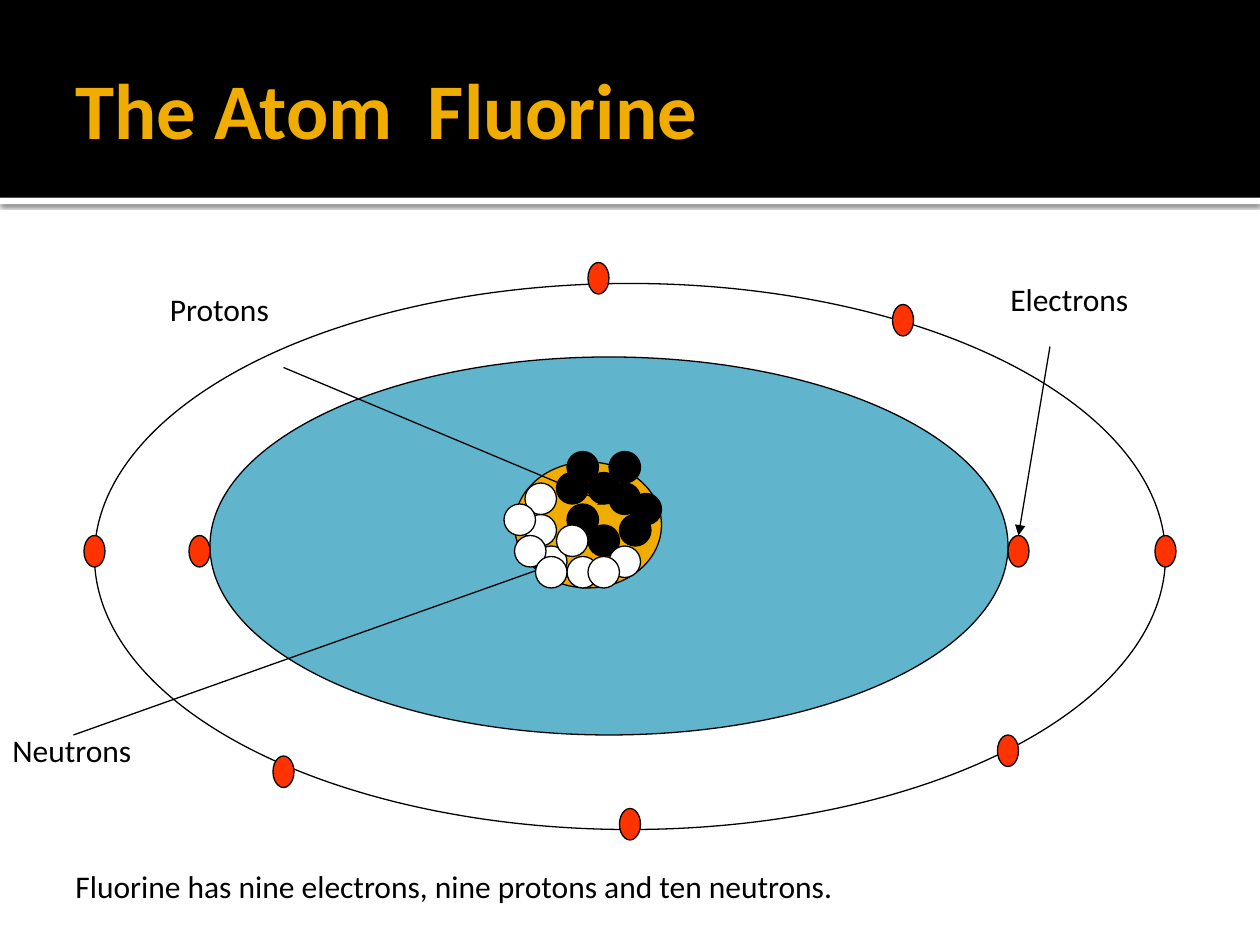
from dataclasses import dataclass

from lxml.etree import SubElement
from pptx import Presentation
from pptx.dml.color import RGBColor
from pptx.enum.shapes import MSO_CONNECTOR as Connector, MSO_SHAPE as Preset
from pptx.enum.text import MSO_ANCHOR as Anchor, MSO_AUTO_SIZE as AutoSize, PP_ALIGN as Align
from pptx.oxml.ns import qn
from pptx.util import Inches, Pt

FONT = "Calibri"
BLACK, WHITE, GOLD, BLUE, RED = "000000", "FFFFFF", "F0AD00", "60B5CC", "FF3300"
GRID = 12


@dataclass
class Oval:
    left: int
    top: int
    width: int
    height: int
    color: str | None = None


@dataclass
class Pointer:
    start: tuple[int, int]
    end: tuple[int, int]


@dataclass
class Label:
    text: str
    left: float
    top: float
    width: float


SHELL = Oval(20, 34, 76, 36, BLUE)
NUCLEUS = Oval(49, 44, 14, 12, GOLD)
ORBIT = Oval(9, 27, 102, 52)
ELECTRONS = [(96, 51), (18, 51), (110, 51), (8, 51), (56, 25),
             (59, 77), (95, 70), (26, 72), (85, 29)]
PROTONS = [(54, 48), (56, 45), (59, 49), (53, 45), (58, 46),
           (56, 50), (60, 47), (54, 43), (58, 43)]
NEUTRONS = [(54, 53), (51, 52), (50, 49), (58, 52), (53, 50),
            (50, 46), (56, 53), (49, 51), (51, 53), (48, 48)]
POINTERS = [Pointer((27, 35), (58, 48)),
            Pointer((100, 33), (97, 51)),
            Pointer((7, 70), (52, 54))]
LABELS = [Label("Protons", 1.25, 2.25, 2.17),
          Label("Neutrons", 0, 5.75, 1.5),
          Label("Electrons", 7.92, 2.17, 1.67),
          Label("Fluorine has nine electrons, nine protons and ten neutrons.", 0.5, 6.83, 8.92)]


def rgb(color: str) -> RGBColor:
    return RGBColor.from_string(color)


def grid(units: int) -> int:
    return Inches(units / GRID)


def add_band(page, top: float, height: float, color: str):
    band = page.shapes.add_shape(Preset.RECTANGLE, 0, Inches(top), Inches(10), Inches(height))
    band.shadow.inherit = False
    band.fill.solid()
    band.fill.fore_color.rgb = rgb(color)
    band.line.fill.background()
    return band


def add_drop_shadow(shape) -> None:
    effects = shape.element.spPr.find(qn("a:effectLst"))
    shadow = SubElement(effects, qn("a:outerShdw"), blurRad=str(Pt(2.5)), dist=str(Pt(0.8)),
                        dir="5400000", algn="t", rotWithShape="0")
    color = SubElement(shadow, qn("a:srgbClr"), val=BLACK)
    SubElement(color, qn("a:alpha"), val="60000")


def add_title(page, text: str) -> None:
    title = page.shapes.title
    title.left, title.top, title.width, title.height = (
        Inches(0.5), Inches(0.17), Inches(9), Inches(1.37))
    frame = title.text_frame
    frame.text = text
    frame.auto_size = AutoSize.NONE
    frame.vertical_anchor = Anchor.MIDDLE
    frame.margin_left = Inches(0.1)
    frame.margin_right = frame.margin_top = frame.margin_bottom = Inches(0.05)
    para = frame.paragraphs[0]
    para.alignment = Align.LEFT
    para.font.name, para.font.size, para.font.bold = FONT, Pt(45), True
    para.font.color.rgb = rgb(GOLD)
    title.element.getparent().append(title.element)


def add_oval(page, oval: Oval) -> None:
    shape = page.shapes.add_shape(Preset.OVAL, grid(oval.left), grid(oval.top),
                                  grid(oval.width), grid(oval.height))
    shape.shadow.inherit = False
    if oval.color:
        shape.fill.solid()
        shape.fill.fore_color.rgb = rgb(oval.color)
    else:
        shape.fill.background()
    shape.line.color.rgb = rgb(BLACK)
    shape.line.width = Pt(0.75)


def add_particles(page, places: list[tuple[int, int]], width: int, color: str) -> None:
    for left, top in places:
        add_oval(page, Oval(left, top, width, 3, color))


def add_pointer(page, pointer: Pointer) -> None:
    arrow = page.shapes.add_connector(Connector.STRAIGHT, *map(grid, pointer.start + pointer.end))
    arrow.line.color.rgb = rgb(BLACK)
    arrow.line.width = Pt(0.75)
    SubElement(arrow.line._get_or_add_ln(), qn("a:tailEnd"), type="triangle")
    SubElement(arrow.element.spPr, qn("a:effectLst"))


def add_label(page, label: Label) -> None:
    box = page.shapes.add_textbox(Inches(label.left), Inches(label.top),
                                  Inches(label.width), Inches(0.5))
    frame = box.text_frame
    frame.word_wrap = True
    frame.text = label.text
    para = frame.paragraphs[0]
    para.font.name, para.font.size = FONT, Pt(18)
    para.font.color.rgb = rgb(BLACK)


def main() -> None:
    deck = Presentation()
    deck.slide_width, deck.slide_height = Inches(10), Inches(7.5)
    page = deck.slides.add_slide(deck.slide_layouts[5])

    add_drop_shadow(add_band(page, 1.57, 0.05, WHITE))
    add_band(page, 0, 1.57, BLACK)
    add_title(page, "The Atom  Fluorine")

    for oval in (SHELL, NUCLEUS, ORBIT):
        add_oval(page, oval)
    for pointer in POINTERS:
        add_pointer(page, pointer)
    add_particles(page, ELECTRONS, 2, RED)
    add_particles(page, PROTONS, 3, BLACK)
    add_particles(page, NEUTRONS, 3, WHITE)
    for label in LABELS:
        add_label(page, label)

    deck.save("out.pptx")


if __name__ == "__main__":
    main()
